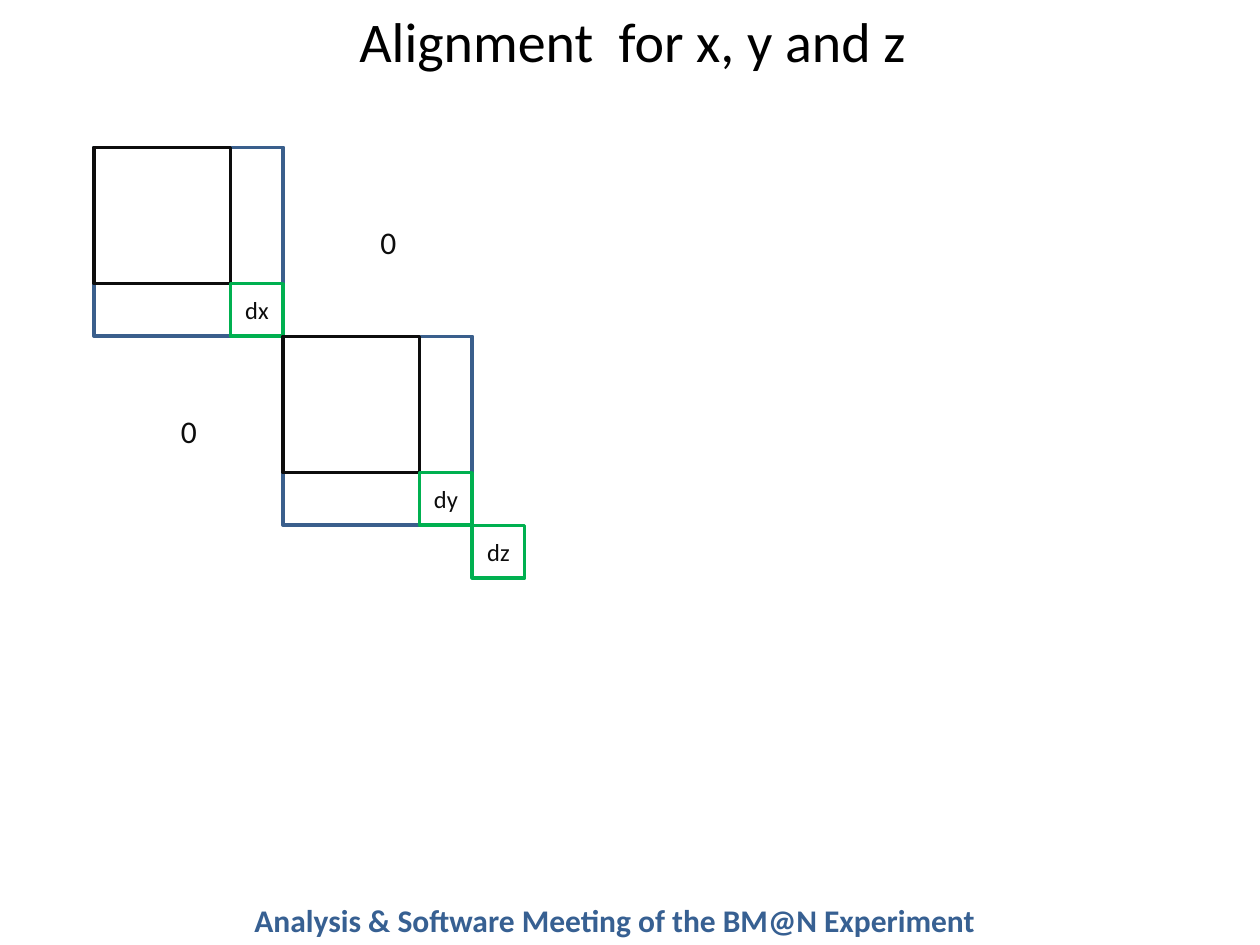
from pptx import Presentation
from pptx.dml.color import RGBColor
from pptx.enum.shapes import MSO_SHAPE
from pptx.enum.text import MSO_ANCHOR, MSO_AUTO_SIZE, PP_ALIGN
from pptx.util import Cm, Pt

BLUE, BLACK, GREEN = "3A5F8C", "0D0D0D", "00B050"
BLOCK, CORNER = 3.81, 1.06  # side lengths in cm


def colour(value):
    return RGBColor.from_string(value)


def write(shape, text, size, ink, align=PP_ALIGN.LEFT, bold=False):
    para = shape.text_frame.paragraphs[0]
    para.alignment = align
    span = para.add_run()
    span.text = text
    span.font.name = "Calibri"
    span.font.size = Pt(size)
    span.font.bold = bold
    span.font.color.rgb = colour(ink)


def add_title(page, left, top, width, height):
    title = page.shapes.title
    title.left, title.top, title.width, title.height = map(Cm, (left, top, width, height))
    frame = title.text_frame
    frame.word_wrap = False
    frame.auto_size = MSO_AUTO_SIZE.NONE
    frame.vertical_anchor = MSO_ANCHOR.TOP
    write(title, "Alignment  for x, y and z", 32, "000000")


def add_square(page, left, top, side, outline, label=None):
    square = page.shapes.add_shape(MSO_SHAPE.RECTANGLE, Cm(left), Cm(top), Cm(side), Cm(side))
    square.shadow.inherit = False
    square.fill.background()
    square.line.color.rgb = colour(outline)
    square.line.width = Pt(2)
    if label:
        frame = square.text_frame
        frame.margin_left = frame.margin_right = 0
        frame.margin_top = frame.margin_bottom = 0
        frame.vertical_anchor = MSO_ANCHOR.MIDDLE
        write(square, label, 14, BLACK, PP_ALIGN.CENTER)


def add_text(page, left, top, width, height, text, ink, align, bold, anchor):
    box = page.shapes.add_textbox(Cm(left), Cm(top), Cm(width), Cm(height))
    box.text_frame.word_wrap = True
    box.text_frame.vertical_anchor = anchor
    write(box, text, 18, ink, align, bold)


def add_matrix(page, left, top):
    # Block outlines along the diagonal
    for step in range(2):
        add_square(page, left + step * BLOCK, top + step * BLOCK, BLOCK, BLUE)
    # Inner block and shift term of each coordinate
    inner = BLOCK - CORNER
    for step, label in enumerate(("dx", "dy")):
        x, y = left + step * BLOCK, top + step * BLOCK
        add_square(page, x, y, inner, BLACK)
        add_square(page, x + inner, y + inner, CORNER, GREEN, label)
    # The last coordinate has only a shift term
    add_square(page, left + 2 * BLOCK, top + 2 * BLOCK, CORNER, GREEN, "dz")
    # Zeros off the diagonal
    for x, y in ((1.06, 5.08), (5.08, 1.27)):
        add_text(page, left + x, top + y, 1.7, 1.27, "0", BLACK,
                 PP_ALIGN.CENTER, False, MSO_ANCHOR.MIDDLE)


def add_footer(page, left, top, width, height):
    add_text(page, left, top, width, height,
             "Analysis & Software Meeting of the BM@N Experiment",
             "376092", PP_ALIGN.LEFT, True, MSO_ANCHOR.TOP)


def main():
    deck = Presentation()
    deck.slide_width, deck.slide_height = Cm(25.4), Cm(19.05)
    page = deck.slides.add_slide(deck.slide_layouts[5])
    add_title(page, 6.99, 0, 11.71, 1.63)
    add_matrix(page, 1.9, 2.97)
    add_footer(page, 4.88, 18.03, 15.24, 1.02)
    deck.save("out.pptx")


if __name__ == "__main__":
    main()
